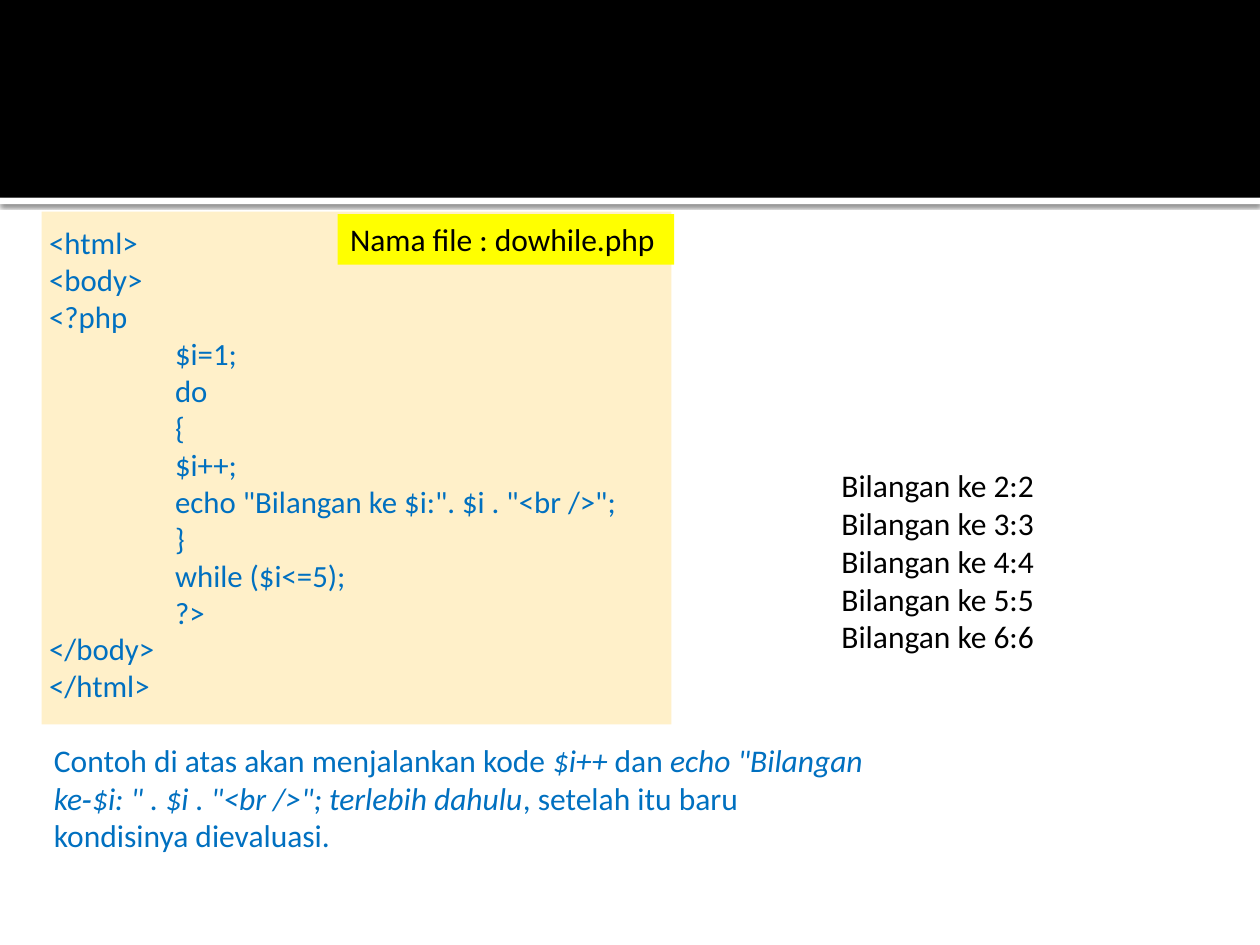
from dataclasses import dataclass, field

import lxml.etree
import pptx
import pptx.dml.color
import pptx.enum.shapes
import pptx.enum.text
import pptx.oxml
import pptx.oxml.ns
import pptx.util
from pptx.util import Inches

COLORS = {
    "black": "000000",
    "white": "FFFFFF",
    "cream": "FFF0C9",
    "yellow": "FFFF00",
    "blue": "0070C0",
}
FONT = "Calibri"


@dataclass
class Run:
    text: str
    italic: bool = False


@dataclass
class Line:
    runs: list[Run]
    indent: float = 0


@dataclass
class Panel:
    left: float
    top: float
    width: float
    height: float
    fill: str | None = None
    lines: list[Line] = field(default_factory=list)
    color: str = "black"
    size: float = 18
    spacing: float | None = None
    insets: tuple[float, float, float, float] = (0.1, 0.05, 0.1, 0.05)
    wrap: bool = True


def rgb(name: str) -> pptx.dml.color.RGBColor:
    return pptx.dml.color.RGBColor.from_string(COLORS[name])


def plain_lines(*texts: str, indent: float = 0) -> list[Line]:
    return [Line([Run(text)], indent) for text in texts]


def write_text(shape, panel: Panel) -> None:
    frame = shape.text_frame
    frame.word_wrap = panel.wrap
    frame.vertical_anchor = pptx.enum.text.MSO_ANCHOR.TOP
    frame.margin_left, frame.margin_top, frame.margin_right, frame.margin_bottom = map(
        Inches, panel.insets
    )
    for index, line in enumerate(panel.lines):
        paragraph = frame.add_paragraph() if index else frame.paragraphs[0]
        paragraph.alignment = pptx.enum.text.PP_ALIGN.LEFT
        if panel.spacing:
            paragraph.line_spacing = pptx.util.Pt(panel.spacing)
        if line.indent:
            properties = paragraph._p.get_or_add_pPr()
            properties.set("marL", str(Inches(line.indent)))
            properties.set("indent", "0")
        for part in line.runs:
            run = paragraph.add_run()
            run.text = part.text
            run.font.name = FONT
            run.font.size = pptx.util.Pt(panel.size)
            run.font.italic = part.italic
            run.font.color.rgb = rgb(panel.color)


def draw_panel(slide, panel: Panel):
    bounds = [Inches(v) for v in (panel.left, panel.top, panel.width, panel.height)]
    if panel.fill:
        shape = slide.shapes.add_shape(pptx.enum.shapes.MSO_SHAPE.RECTANGLE, *bounds)
        shape.shadow.inherit = False
        shape.fill.solid()
        shape.fill.fore_color.rgb = rgb(panel.fill)
        shape.line.fill.background()
    else:
        shape = slide.shapes.add_textbox(*bounds)
    if panel.lines:
        write_text(shape, panel)
    return shape


def add_shadow(shape, blur: float, distance: float, opacity: int) -> None:
    effects = shape._element.spPr.find(pptx.oxml.ns.qn("a:effectLst"))
    shadow = lxml.etree.SubElement(
        effects,
        pptx.oxml.ns.qn("a:outerShdw"),
        blurRad=str(pptx.util.Pt(blur)),
        dist=str(pptx.util.Pt(distance)),
        dir=str(90 * 60000),
        algn="t",
        rotWithShape="0",
    )
    color = lxml.etree.SubElement(
        shadow, pptx.oxml.ns.qn("a:srgbClr"), val=COLORS["black"]
    )
    lxml.etree.SubElement(color, pptx.oxml.ns.qn("a:alpha"), val=str(opacity * 1000))


HEADER_RULE = Panel(0, 1.57, 10, 0.05, "white")
HEADER = Panel(0, 0, 10, 1.57, "black")
CODE = Panel(
    0.33, 1.68, 5, 4.07, "cream",
    plain_lines("<html>", "<body>", "<?php")
    + plain_lines(
        "$i=1;",
        "do",
        "{",
        "$i++;",
        'echo "Bilangan ke $i:". $i . "<br />";',
        "}",
        "while ($i<=5);",
        "?>",
        indent=1,
    )
    + plain_lines("</body>", "</html>"),
    "blue", 17.6, 21.1, (0.06, 0.1, 0.1, 0.05),
)
OUTPUT = Panel(
    6.58, 3.65, 2.5, 1.62,
    lines=plain_lines(*(f"Bilangan ke {number}:{number}" for number in range(2, 7))),
)
EXPLANATION = Panel(
    0.33, 5.83, 6.75, 1.31,
    lines=[
        Line([
            Run("Contoh di atas akan menjalankan kode "),
            Run("$i++ ", True),
            Run("dan "),
            Run('echo "Bilangan ke‐$i: " . $i . "<br />"; terlebih dahulu', True),
            Run(", setelah itu baru kondisinya dievaluasi."),
        ])
    ],
    color="blue",
)
FILE_NAME = Panel(
    2.68, 1.7, 2.67, 0.4, "yellow",
    plain_lines("Nama file : dowhile.php"), wrap=False,
)


def main() -> None:
    presentation = pptx.Presentation()
    presentation.slide_width = Inches(10)
    presentation.slide_height = Inches(7.5)
    slide = presentation.slides.add_slide(presentation.slide_layouts[6])
    add_shadow(draw_panel(slide, HEADER_RULE), 2.5, 0.8, 60)
    for panel in (HEADER, CODE, OUTPUT, EXPLANATION, FILE_NAME):
        draw_panel(slide, panel)
    presentation.save("out.pptx")


if __name__ == "__main__":
    main()
